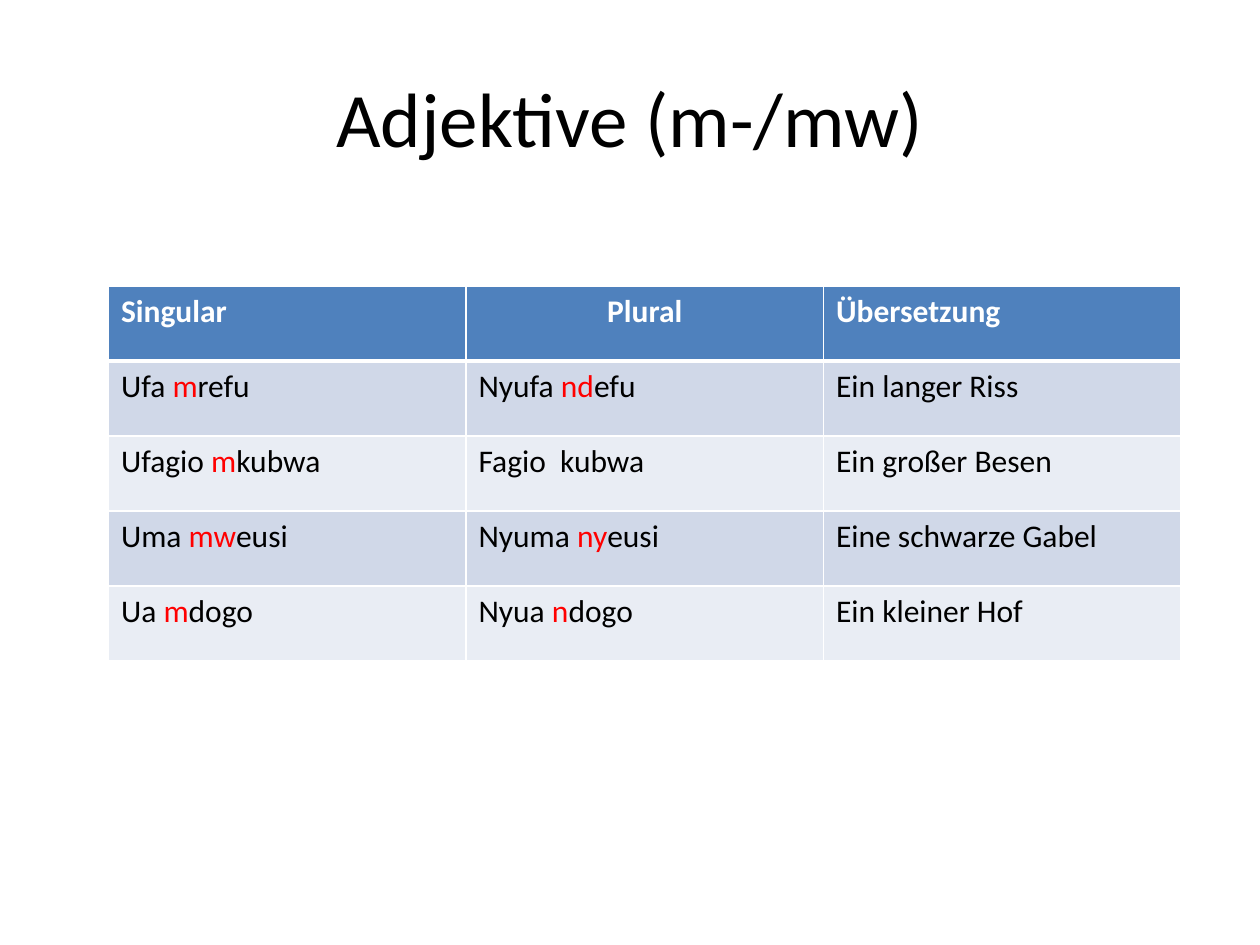
from lxml import etree
from pptx import Presentation, util as u
from pptx.dml import color
from pptx.enum import text
from pptx.oxml import ns

HEADER = ["Singular", "Plural", "Übersetzung"]
ADJECTIVES = [
    ["Ufa *m*refu", "Nyufa *nd*efu", "Ein langer Riss"],
    ["Ufagio *m*kubwa", "Fagio  kubwa", "Ein großer Besen"],
    ["Uma *mw*eusi", "Nyuma *ny*eusi", "Eine schwarze Gabel"],
    ["Ua *m*dogo", "Nyua *n*dogo", "Ein kleiner Hof"],
]


def rgb(value):
    return color.RGBColor.from_string(value)


class SlideBuilder:
    """Holds the style and the current slide and adds its elements."""

    font = "Calibri"
    ink, paper, prefix = "000000", "FFFFFF", "FF0000"
    header_fill, bands = "4F81BD", ("D0D8E8", "E9EDF4")

    def __init__(self, slide):
        self.slide = slide

    def fill_paragraph(self, paragraph, content, size, ink, bold=False, centred=False):
        paragraph.font.name = self.font
        paragraph.font.size = u.Pt(size)
        paragraph.font.bold = bold
        paragraph.alignment = text.PP_ALIGN.CENTER if centred else text.PP_ALIGN.LEFT
        for index, part in enumerate(content.split("*")):
            run = paragraph.add_run()
            run.text = part
            run.font.color.rgb = rgb(self.prefix if index % 2 else ink)

    def title(self, content, left, top, width, height):
        shape = self.slide.shapes.add_textbox(*map(u.Pt, (left, top, width, height)))
        frame = shape.text_frame
        frame.word_wrap = True
        frame.vertical_anchor = text.MSO_ANCHOR.MIDDLE
        self.fill_paragraph(frame.paragraphs[0], content, 44, self.ink, centred=True)

    def borders(self, cell, **widths):
        properties = cell._tc.get_or_add_tcPr()
        for side, width in widths.items():
            line = etree.SubElement(properties, ns.qn(f"a:ln{side}"), w=str(u.Pt(width)))
            fill = etree.SubElement(line, ns.qn("a:solidFill"))
            etree.SubElement(fill, ns.qn("a:srgbClr"), val=self.paper)

    def table(self, rows, left, top, column_width, row_height):
        columns = len(rows[0])
        size = column_width * columns, row_height * len(rows)
        shape = self.slide.shapes.add_table(
            len(rows), columns, *map(u.Pt, (left, top, *size)))
        for column in shape.table.columns:
            column.width = u.Pt(column_width)
        for row_index, row in enumerate(rows):
            shape.table.rows[row_index].height = u.Pt(row_height)
            header = row_index == 0
            for column_index, content in enumerate(row):
                cell = shape.table.cell(row_index, column_index)
                self.borders(cell, L=1, R=1, T=3 if row_index == 1 else 1, B=3 if header else 1)
                cell.fill.solid()
                cell.fill.fore_color.rgb = rgb(
                    self.header_fill if header else self.bands[(row_index - 1) % 2])
                self.fill_paragraph(cell.text_frame.paragraphs[0], content, 18,
                                    self.paper if header else self.ink, bold=header,
                                    centred=header and column_index == 1)


def main():
    presentation = Presentation()
    presentation.slide_width, presentation.slide_height = u.Pt(720), u.Pt(540)
    builder = SlideBuilder(presentation.slides.add_slide(presentation.slide_layouts[6]))
    builder.title("Adjektive (m-/mw)", 36, 21.6, 648, 90)
    builder.table([HEADER] + ADJECTIVES, 62, 163.4, 204.3, 42.9)
    presentation.save("out.pptx")


if __name__ == "__main__":
    main()
